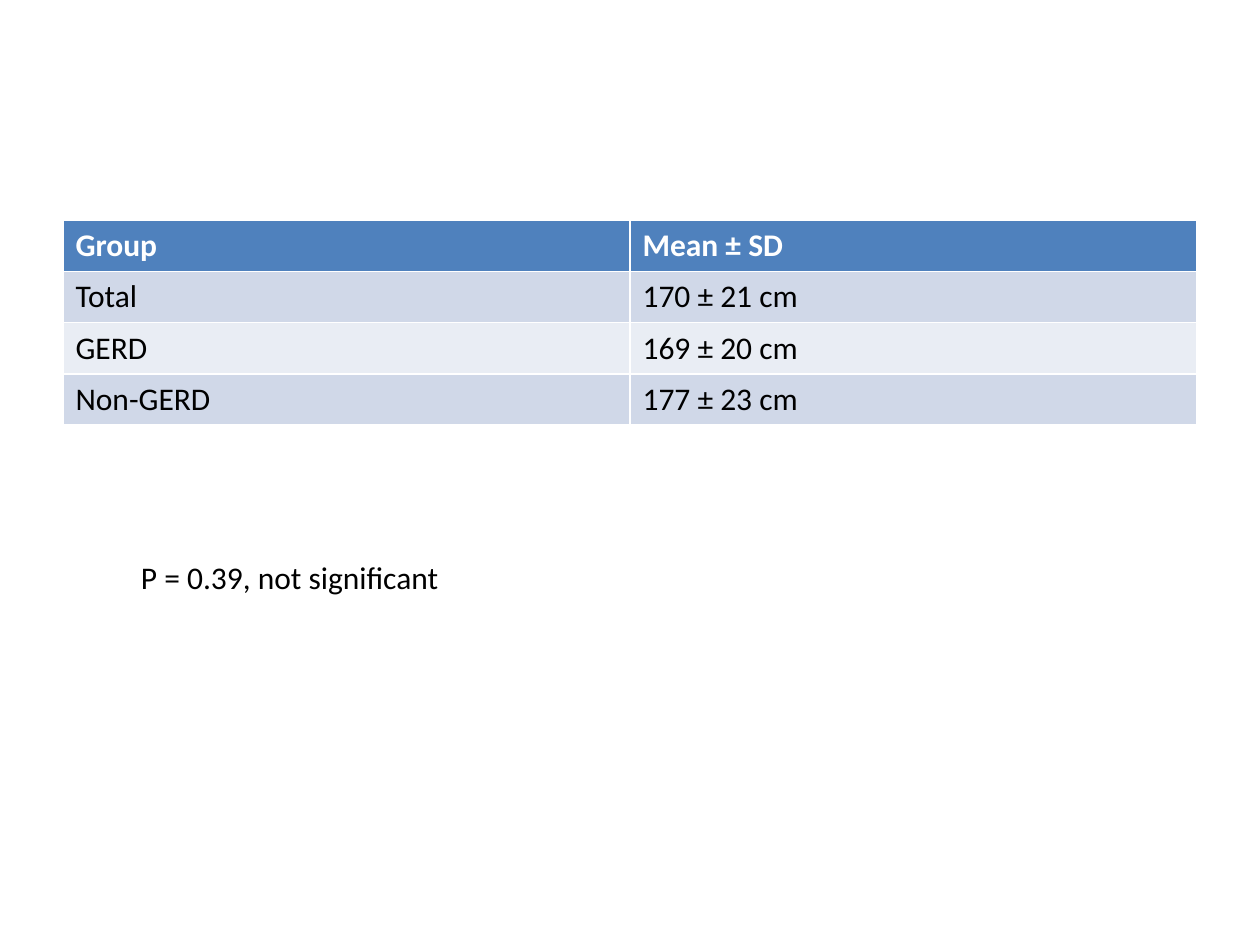
from pptx import Presentation
from pptx.dml.color import RGBColor
from pptx.enum import text
from pptx.util import Inches, Pt

WHITE = RGBColor(0xFF, 0xFF, 0xFF)
BLACK = RGBColor(0, 0, 0)
HEADER_BLUE = RGBColor(0x4F, 0x81, 0xBD)
BANDS = (RGBColor(0xE9, 0xED, 0xF4), RGBColor(0xD0, 0xD8, 0xE8))

GROUP_ROWS = (
    ("Group", "Mean ± SD"),
    ("Total", "170 ± 21 cm"),
    ("GERD", "169 ± 20 cm"),
    ("Non-GERD", "177 ± 23 cm"),
)


def write_text(frame, words, color, bold=False):
    """Put one line of 18 point Calibri into a text frame."""
    frame.text = words
    font = frame.paragraphs[0].runs[0].font
    font.name, font.size, font.bold = "Calibri", Pt(18), bold
    font.color.rgb = color


def add_group_table(page, left, top, width, height):
    """Add the table of group means with a header and banded rows."""
    table = page.shapes.add_table(
        len(GROUP_ROWS), len(GROUP_ROWS[0]), left, top, width, height
    ).table
    for row_index, values in enumerate(GROUP_ROWS):
        header = row_index == 0
        for column_index, value in enumerate(values):
            cell = table.cell(row_index, column_index)
            cell.vertical_anchor = text.MSO_ANCHOR.MIDDLE
            cell.fill.solid()
            cell.fill.fore_color.rgb = HEADER_BLUE if header else BANDS[row_index % 2]
            write_text(cell.text_frame, value, WHITE if header else BLACK, header)


def add_significance(page, left, top, width, height):
    """Add the line that states the p value."""
    frame = page.shapes.add_textbox(left, top, width, height).text_frame
    frame.auto_size = text.MSO_AUTO_SIZE.SHAPE_TO_FIT_TEXT
    write_text(frame, "P = 0.39, not significant", BLACK)


def main():
    """Build the slide and save the deck."""
    deck = Presentation()
    deck.slide_width, deck.slide_height = Inches(10), Inches(7.5)
    page = deck.slides.add_slide(deck.slide_layouts[6])
    add_group_table(page, Inches(0.5), Inches(1.75), Inches(9), Inches(1.62))
    add_significance(page, Inches(1.02), Inches(4.38), Inches(2.58), Inches(0.4))
    deck.save("out.pptx")


if __name__ == "__main__":
    main()
